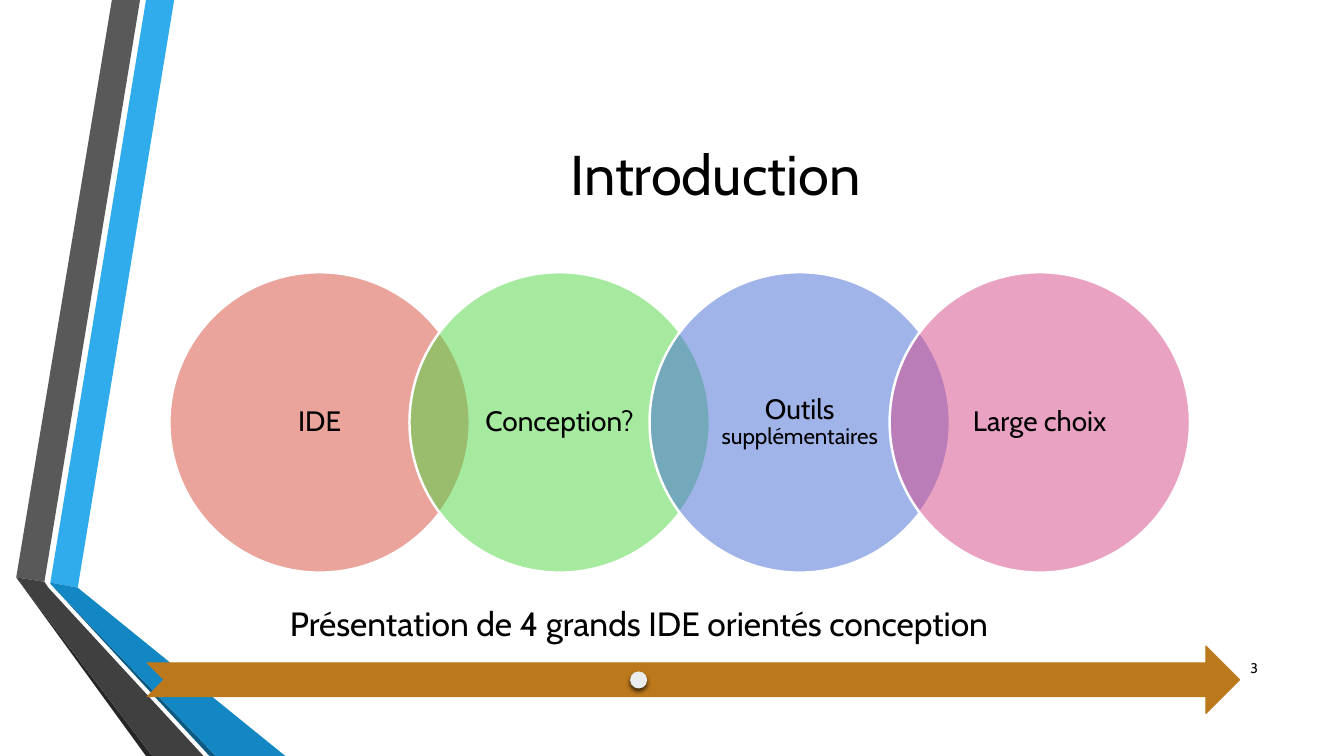
import pptx
import pptx.dml.color
import pptx.enum.shapes
import pptx.enum.text
import pptx.oxml
import pptx.oxml.ns
import pptx.util

Cm = pptx.util.Cm
Pt = pptx.util.Pt
RGBColor = pptx.dml.color.RGBColor
MSO_SHAPE = pptx.enum.shapes.MSO_SHAPE
ANCHOR = pptx.enum.text.MSO_ANCHOR
ALIGN = pptx.enum.text.PP_ALIGN
qn = pptx.oxml.ns.qn

BLACK = RGBColor(0x00, 0x00, 0x00)
WHITE = RGBColor(0xFF, 0xFF, 0xFF)
SKY = RGBColor(0x30, 0xAC, 0xEC)
BLUE = RGBColor(0x12, 0x87, 0xC3)
DEEP_BLUE = RGBColor(0x0C, 0x5A, 0x82)
GREY = RGBColor(0x59, 0x59, 0x59)
DARK_GREY = RGBColor(0x40, 0x40, 0x40)
CHARCOAL = RGBColor(0x26, 0x26, 0x26)
OCHRE = RGBColor(0xBC, 0x79, 0x1C)
PALE = RGBColor(0xEB, 0xEC, 0xED)
RED = RGBColor(0xD6, 0x4A, 0x3B)
GREEN = RGBColor(0x4C, 0xD6, 0x3F)
INDIGO = RGBColor(0x43, 0x6A, 0xD6)
PINK = RGBColor(0xD6, 0x47, 0x87)


def paint(s, color, line=None, width=0):
    s.shadow.inherit = False
    s.fill.solid()
    s.fill.fore_color.rgb = color
    if line is None:
        s.line.fill.background()
    else:
        s.line.color.rgb = line
        s.line.width = Pt(width)


def write(s, runs, align=ALIGN.CENTER, spacing=None, **frame):
    """Fill s with one paragraph of (text, size) runs; frame holds text frame settings."""
    tf = s.text_frame
    settings = {"word_wrap": True, "vertical_anchor": ANCHOR.MIDDLE, **frame}
    for name, value in settings.items():
        setattr(tf, name, value)
    p = tf.paragraphs[0]
    p.alignment = align
    p.line_spacing = spacing
    for text, size in runs:
        r = p.add_run()
        r.text = text
        r.font.name = "Cabin"
        r.font.size = Pt(size)
        r.font.color.rgb = BLACK


prs = pptx.Presentation()
prs.slide_width = Cm(33.87)
prs.slide_height = Cm(19.05)
shapes = prs.slides.add_slide(prs.slide_layouts[6]).shapes

# Folded ribbons on the left, points in centimetres
ribbons = [
    (SKY, [(1.27, 14.68), (1.96, 14.81), (4.39, 0), (3.68, 0)]),
    (GREY, [(3.53, 0), (2.82, 0), (0.41, 14.55), (1.12, 14.66)]),
    (CHARCOAL, [(0.41, 14.55), (3.68, 19.05), (3.84, 19.05)]),
    (DEEP_BLUE, [(1.27, 14.71), (5.28, 19.05), (5.44, 19.05)]),
    (BLUE, [(1.27, 14.68), (1.27, 14.71), (5.44, 19.05), (7.19, 19.05), (1.96, 14.81)]),
    (DARK_GREY, [(5.13, 19.05), (1.22, 14.81), (1.12, 14.66), (0.41, 14.55), (3.84, 19.05)]),
]
for color, points in ribbons:
    corners = [(Cm(x), Cm(y)) for x, y in points]
    builder = shapes.build_freeform(*corners[0])
    builder.add_line_segments(corners[1:], close=True)
    paint(builder.convert_to_shape(), color)

title = shapes.add_textbox(Cm(4.11), Cm(1.91), Cm(27.84), Cm(4.88))
write(title, [("Introduction", 40)])

# Timeline
arrow = shapes.add_shape(MSO_SHAPE.NOTCHED_RIGHT_ARROW, Cm(3.71), Cm(16.28), Cm(27.53), Cm(1.7))
paint(arrow, OCHRE, OCHRE, 0.75)

caption = shapes.add_textbox(Cm(3.71), Cm(14.99), Cm(24.79), Cm(1.7))
margins = {f"margin_{side}": Cm(0.48) for side in ("left", "top", "right", "bottom")}
write(caption, [("Présentation de 4 grands IDE orientés conception", 24)],
      spacing=0.9, vertical_anchor=ANCHOR.BOTTOM, **margins)

dot = shapes.add_shape(MSO_SHAPE.OVAL, Cm(15.88), Cm(16.92), Cm(0.43), Cm(0.43))
paint(dot, PALE)
effects = dot.fill._xPr.find(qn("a:effectLst"))
effects.append(pptx.oxml.parse_xml(
    '<a:outerShdw xmlns:a="http://schemas.openxmlformats.org/drawingml/2006/main"'
    f' blurRad="{Pt(3)}" dist="{Pt(2)}" dir="5400000" algn="ctr" rotWithShape="0">'
    '<a:srgbClr val="000000"><a:alpha val="64000"/></a:srgbClr></a:outerShdw>'))

# Overlapping circles
DIAMETER, STEP = 7.57, 6.05
topics = [
    (RED, [("IDE", 20)]),
    (GREEN, [("Conception?", 20)]),
    (INDIGO, [("Outils ", 20), ("supplémentaires", 16)]),
    (PINK, [("Large choix", 20)]),
]
for i, (color, runs) in enumerate(topics):
    circle = shapes.add_shape(MSO_SHAPE.OVAL, Cm(4.27 + i * STEP), Cm(6.86),
                              Cm(DIAMETER), Cm(DIAMETER))
    paint(circle, color, WHITE, 1.75)
    rgb = circle.fill._xPr.find(qn("a:solidFill")).find(qn("a:srgbClr"))
    rgb.append(rgb.makeelement(qn("a:alpha"), {"val": "50000"}))
    write(circle, runs, spacing=0.9, margin_left=Cm(0.41), margin_right=Cm(0.41),
          margin_top=Cm(0.08), margin_bottom=Cm(0.08))

number = shapes.add_textbox(Cm(30.43), Cm(16.31), Cm(1.52), Cm(1.02))
write(number, [("3", 10)], align=ALIGN.RIGHT)

prs.save("out.pptx")
